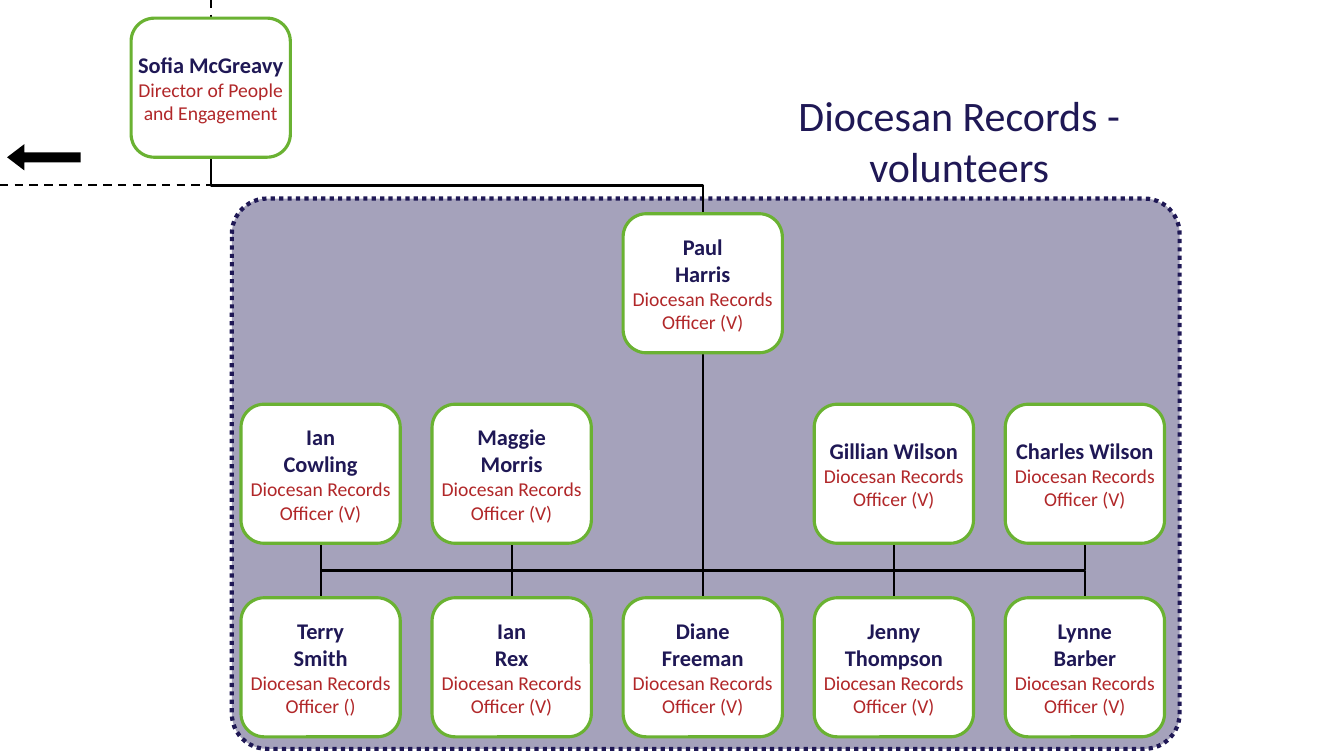
"""Build the organisation chart of the diocesan records volunteers."""
from dataclasses import dataclass

from lxml import etree
from pptx import Presentation
from pptx.dml.color import RGBColor
from pptx.enum.dml import MSO_LINE
from pptx.enum.shapes import MSO_CONNECTOR, MSO_SHAPE
from pptx.enum.text import MSO_ANCHOR, MSO_AUTO_SIZE, PP_ALIGN
from pptx.oxml.ns import qn
from pptx.util import Inches, Pt

STRAIGHT, ELBOW = MSO_CONNECTOR.STRAIGHT, MSO_CONNECTOR.ELBOW
CARD = MSO_SHAPE.FLOWCHART_ALTERNATE_PROCESS
ROUNDED = MSO_SHAPE.ROUNDED_RECTANGLE
ARROW = MSO_SHAPE.RIGHT_ARROW
DASH, DOTS = MSO_LINE.DASH, MSO_LINE.ROUND_DOT
CENTER, TOP, MIDDLE = PP_ALIGN.CENTER, MSO_ANCHOR.TOP, MSO_ANCHOR.MIDDLE
NO_FIT = MSO_AUTO_SIZE.NONE

TITLE = "Diocesan Records - volunteers"
OFFICER = "Diocesan Records Officer (V)"
DIRECTOR = (["Sofia McGreavy"], "Director of People and Engagement")
LEAD = (["Paul", "Harris"], OFFICER)
UPPER_TEAM = {
    0: (["Ian", "Cowling"], OFFICER),
    1: (["Maggie", "Morris"], OFFICER),
    3: (["Gillian Wilson"], OFFICER),
    4: (["Charles Wilson"], OFFICER),
}
LOWER_TEAM = {
    0: (["Terry", "Smith"], "Diocesan Records Officer ()"),
    1: (["Ian", "Rex"], OFFICER),
    2: (["Diane", "Freeman"], OFFICER),
    3: (["Jenny", "Thompson"], OFFICER),
    4: (["Lynne", "Barber"], OFFICER),
}


@dataclass(frozen=True)
class Theme:
    font: str = "Calibri"
    navy: RGBColor = RGBColor(0x1F, 0x18, 0x55)
    green: RGBColor = RGBColor(0x6A, 0xB2, 0x32)
    red: RGBColor = RGBColor(0xB1, 0x27, 0x29)
    white: RGBColor = RGBColor(0xFF, 0xFF, 0xFF)
    black: RGBColor = RGBColor(0, 0, 0)
    title_size: int = 30
    name_size: int = 16
    role_size: int = 14
    panel_opacity: int = 40
    panel_line: float = 3
    card_line: float = 2.25
    connector_line: float = 1.5


THEME = Theme()
SLIDE_SIZE = (13.33, 7.5)
PANEL_BOX = (2.3, 1.97, 9.4, 5.46)
TITLE_BOX = (7.34, 0.84, 4.35, 1.11)
ARROW_BOX = (0.07, 1.43, 0.73, 0.26)
CARD_WIDTH, CARD_HEIGHT = 1.58, 1.38
FIRST_COLUMN, LAST_COLUMN, COLUMNS = 2.39, 9.97, 5
DIRECTOR_LEFT = 1.3
DIRECTOR_TOP, LEAD_TOP, UPPER_TOP, LOWER_TOP = 0.18, 2.12, 4.01, 5.93
JOINT_HEIGHT, BRANCH_DROP = 5.38, 0.28


def column_left(column):
    return FIRST_COLUMN + column * (LAST_COLUMN - FIRST_COLUMN) / (COLUMNS - 1)


def column_center(column):
    return column_left(column) + CARD_WIDTH / 2


def inches(values):
    return [Inches(value) for value in values]


def style_paragraph(paragraph, size, color, bold=False):
    paragraph.alignment = CENTER
    paragraph.font.name = THEME.font
    paragraph.font.size = Pt(size)
    paragraph.font.bold = bold
    paragraph.font.color.rgb = color


def add_filled(slide, kind, box, color):
    shape = slide.shapes.add_shape(kind, *inches(box))
    shape.shadow.inherit = False
    shape.fill.solid()
    shape.fill.fore_color.rgb = color
    return shape


def add_panel(slide):
    panel = add_filled(slide, ROUNDED, PANEL_BOX, THEME.navy)
    panel.adjustments[0] = 0.064
    panel.line.color.rgb = THEME.navy
    panel.line.width = Pt(THEME.panel_line)
    panel.line.dash_style = DOTS
    color = panel.fill._xPr.find(qn("a:solidFill"))[0]
    etree.SubElement(color, qn("a:alpha"), val=str(THEME.panel_opacity * 1000))


def add_title(slide):
    title = slide.shapes.title
    title.left, title.top, title.width, title.height = inches(TITLE_BOX)
    frame = title.text_frame
    frame.text = TITLE
    frame.word_wrap = True
    frame.auto_size = NO_FIT
    frame.vertical_anchor = TOP
    style_paragraph(frame.paragraphs[0], THEME.title_size, THEME.navy)


def add_line(slide, start, end, kind=STRAIGHT, dash=None):
    line = slide.shapes.add_connector(kind, *inches(start + end))
    line.line.color.rgb = THEME.black
    line.line.width = Pt(THEME.connector_line)
    if dash:
        line.line.dash_style = dash
    etree.SubElement(line._element.spPr, qn("a:effectLst"))
    return line._element.spPr


def add_branch(slide, start, end, drop):
    """Leave start vertically, turn after the drop and reach end vertically."""
    middle_x, middle_y = (start[0] + end[0]) / 2, (start[1] + end[1]) / 2
    half_x, half_y = (end[0] - start[0]) / 2, (end[1] - start[1]) / 2
    turned_start = (middle_x - half_y, middle_y + half_x)
    turned_end = (middle_x + half_y, middle_y - half_x)
    properties = add_line(slide, turned_start, turned_end, ELBOW)
    properties.find(qn("a:xfrm")).set("rot", str(90 * 60000))
    share = round(drop / (end[1] - start[1]) * 100000)
    guides = properties.find(qn("a:prstGeom")).find(qn("a:avLst"))
    etree.SubElement(guides, qn("a:gd"), name="adj1", fmla=f"val {share}")


def add_lines(slide):
    director = DIRECTOR_LEFT + CARD_WIDTH / 2
    lead = column_center(COLUMNS // 2)
    director_bottom = DIRECTOR_TOP + CARD_HEIGHT
    add_line(slide, (director, 0), (director, DIRECTOR_TOP), dash=DASH)
    corner = add_line(slide, (0, LEAD_TOP - BRANCH_DROP), (director, director_bottom), ELBOW, DASH)
    corner.find(qn("a:prstGeom")).set("prst", "bentConnector2")
    add_branch(slide, (lead, LEAD_TOP), (director, director_bottom), -BRANCH_DROP)
    add_line(slide, (lead, LEAD_TOP + CARD_HEIGHT), (lead, LOWER_TOP))
    for team, height in ((UPPER_TEAM, UPPER_TOP + CARD_HEIGHT), (LOWER_TEAM, LOWER_TOP)):
        for column in team:
            if column != COLUMNS // 2:
                end = (column_center(column), height)
                add_branch(slide, (lead, JOINT_HEIGHT), end, BRANCH_DROP)


def add_card(slide, left, top, person):
    names, role = person
    card = add_filled(slide, CARD, (left, top, CARD_WIDTH, CARD_HEIGHT), THEME.white)
    card.line.color.rgb = THEME.green
    card.line.width = Pt(THEME.card_line)
    frame = card.text_frame
    frame.margin_left = frame.margin_right = frame.margin_top = frame.margin_bottom = 0
    frame.word_wrap = True
    frame.vertical_anchor = MIDDLE
    frame.text = "\n".join(names + [role])
    *name_paragraphs, role_paragraph = frame.paragraphs
    for paragraph in name_paragraphs:
        style_paragraph(paragraph, THEME.name_size, THEME.navy, bold=True)
    style_paragraph(role_paragraph, THEME.role_size, THEME.red)


def add_arrow(slide):
    arrow = add_filled(slide, ARROW, ARROW_BOX, THEME.black)
    arrow.line.fill.background()
    arrow.rotation = 180
    arrow.adjustments[0] = 0.38
    arrow.adjustments[1] = 0.655


def main():
    presentation = Presentation()
    presentation.slide_width, presentation.slide_height = inches(SLIDE_SIZE)
    slide = presentation.slides.add_slide(presentation.slide_layouts.get_by_name("Title Only"))
    add_panel(slide)
    add_title(slide)
    add_lines(slide)
    add_card(slide, DIRECTOR_LEFT, DIRECTOR_TOP, DIRECTOR)
    add_card(slide, column_left(COLUMNS // 2), LEAD_TOP, LEAD)
    for top, team in ((UPPER_TOP, UPPER_TEAM), (LOWER_TOP, LOWER_TEAM)):
        for column, person in team.items():
            add_card(slide, column_left(column), top, person)
    add_arrow(slide)
    presentation.save("out.pptx")


if __name__ == "__main__":
    main()
